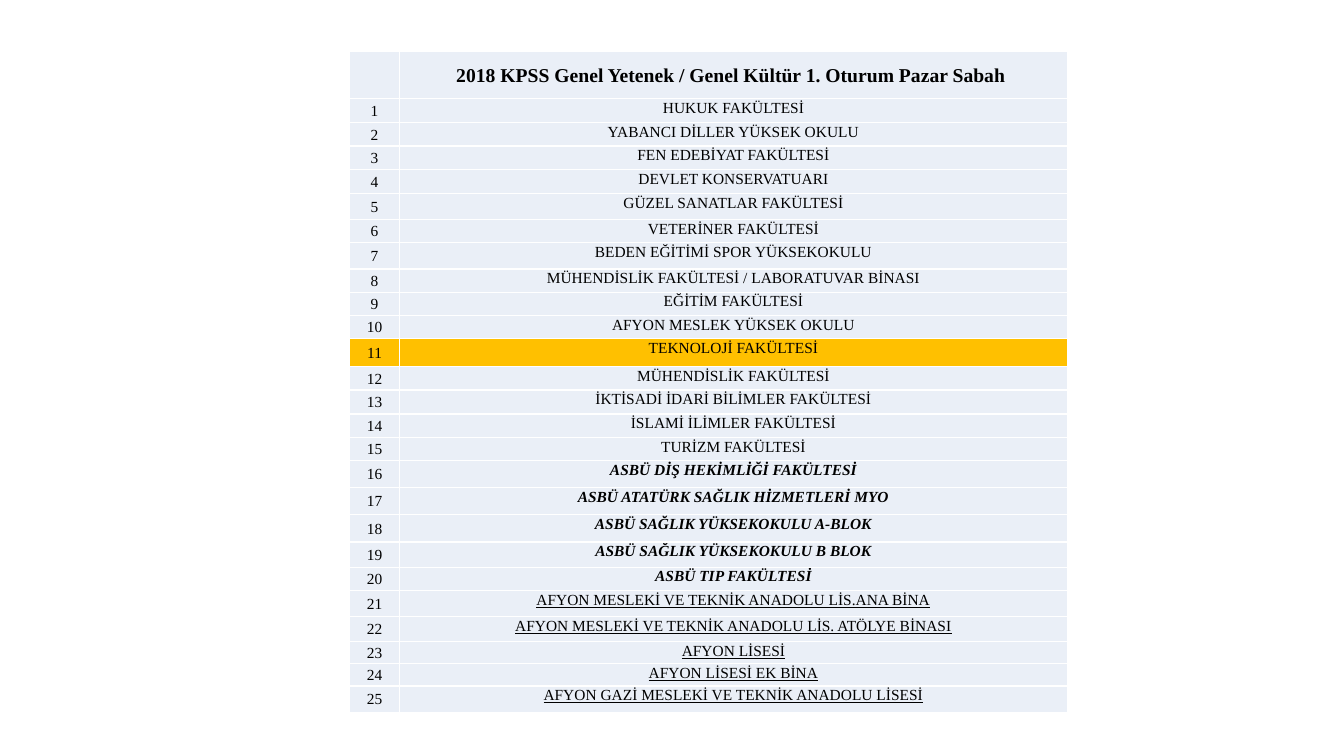
from dataclasses import dataclass

from lxml.etree import SubElement
from pptx import Presentation
from pptx.dml.color import RGBColor
from pptx.enum.text import MSO_ANCHOR, PP_ALIGN
from pptx.oxml.ns import qn
from pptx.util import Inches, Pt


@dataclass(frozen=True)
class Theme:
    font: str = "Times New Roman"
    ink: str = "000000"
    row: str = "EAEFF7"
    highlight: str = "FFC000"
    border: str = "FFFFFF"
    border_width: int = Pt(1)
    heading_size: int = Pt(14)
    body_size: int = Pt(11)


THEME = Theme()
PLAIN = {}
HEADING = {"bold": True}
HEALTH = {"bold": True, "italic": True}
SCHOOL = {"underline": True}

EXAM_SESSION = "2018 KPSS Genel Yetenek / Genel Kültür 1. Oturum Pazar Sabah"
HEADING_HEIGHT = 0.47
NUMBER_WIDTH = 0.49
HIGHLIGHTED_NUMBER = 11
BUILDINGS = [
    ("HUKUK FAKÜLTESİ", 0.24, PLAIN),
    ("YABANCI DİLLER YÜKSEK OKULU", 0.23, PLAIN),
    ("FEN EDEBİYAT FAKÜLTESİ", 0.23, PLAIN),
    ("DEVLET KONSERVATUARI", 0.24, PLAIN),
    ("GÜZEL SANATLAR FAKÜLTESİ", 0.26, PLAIN),
    ("VETERİNER FAKÜLTESİ", 0.23, PLAIN),
    ("BEDEN EĞİTİMİ SPOR YÜKSEKOKULU", 0.26, PLAIN),
    ("MÜHENDİSLİK FAKÜLTESİ / LABORATUVAR BİNASI", 0.23, PLAIN),
    ("EĞİTİM FAKÜLTESİ", 0.23, PLAIN),
    ("AFYON MESLEK YÜKSEK OKULU", 0.23, PLAIN),
    ("TEKNOLOJİ FAKÜLTESİ", 0.28, PLAIN),
    ("MÜHENDİSLİK FAKÜLTESİ", 0.23, PLAIN),
    ("İKTİSADİ İDARİ BİLİMLER FAKÜLTESİ", 0.24, PLAIN),
    ("İSLAMİ İLİMLER FAKÜLTESİ", 0.23, PLAIN),
    ("TURİZM FAKÜLTESİ", 0.23, PLAIN),
    ("ASBÜ DİŞ HEKİMLİĞİ FAKÜLTESİ", 0.27, HEALTH),
    ("ASBÜ ATATÜRK SAĞLIK HİZMETLERİ MYO", 0.27, HEALTH),
    ("ASBÜ SAĞLIK YÜKSEKOKULU A-BLOK", 0.27, HEALTH),
    ("ASBÜ SAĞLIK YÜKSEKOKULU B BLOK", 0.25, HEALTH),
    ("ASBÜ TIP FAKÜLTESİ", 0.23, HEALTH),
    ("AFYON MESLEKİ VE TEKNİK ANADOLU LİS.ANA BİNA", 0.26, SCHOOL),
    ("AFYON MESLEKİ VE TEKNİK ANADOLU LİS. ATÖLYE BİNASI", 0.25, SCHOOL),
    ("AFYON LİSESİ", 0.22, SCHOOL),
    ("AFYON LİSESİ EK BİNA", 0.22, SCHOOL),
    ("AFYON GAZİ MESLEKİ VE TEKNİK ANADOLU LİSESİ", 0.26, SCHOOL),
]


def set_attributes(target, values):
    for attribute, value in values.items():
        setattr(target, attribute, value)


def format_cell(cell, fill, anchor):
    properties = cell._tc.get_or_add_tcPr()
    for side in ("lnL", "lnR", "lnT", "lnB"):
        border = SubElement(properties, qn(f"a:{side}"), w=str(THEME.border_width))
        SubElement(SubElement(border, qn("a:solidFill")), qn("a:srgbClr"), val=THEME.border)
    cell.fill.solid()
    cell.fill.fore_color.rgb = RGBColor.from_string(fill)
    set_attributes(cell, {
        "vertical_anchor": anchor,
        "margin_left": Inches(0.01),
        "margin_right": Inches(0.01),
        "margin_top": Inches(0.01),
        "margin_bottom": 0,
    })


def write_text(cell, text, size, style):
    paragraph = cell.text_frame.paragraphs[0]
    paragraph.alignment = PP_ALIGN.CENTER
    run = paragraph.add_run()
    run.text = text
    set_attributes(run.font, {
        "name": THEME.font, "size": size, "bold": False, "italic": False, **style,
    })
    run.font.color.rgb = RGBColor.from_string(THEME.ink)


def add_building_list(slide, left, top, width):
    heights = [HEADING_HEIGHT] + [height for _, height, _ in BUILDINGS]
    buildings = slide.shapes.add_table(
        len(heights), 2, Inches(left), Inches(top), Inches(width), Inches(sum(heights))
    ).table
    set_attributes(buildings, {"first_row": False, "horz_banding": False})
    for column, column_width in zip(buildings.columns, (NUMBER_WIDTH, width - NUMBER_WIDTH)):
        column.width = Inches(column_width)
    for row, height in zip(buildings.rows, heights):
        row.height = Inches(height)

    for cell in buildings.rows[0].cells:
        format_cell(cell, THEME.row, MSO_ANCHOR.MIDDLE)
    heading = buildings.cell(0, 1)
    write_text(heading, EXAM_SESSION, THEME.heading_size, HEADING)
    write_text(heading, "\t", THEME.body_size, HEADING)

    for number, (building, _, style) in enumerate(BUILDINGS, 1):
        fill = THEME.highlight if number == HIGHLIGHTED_NUMBER else THEME.row
        number_cell, building_cell = buildings.rows[number].cells
        format_cell(number_cell, fill, MSO_ANCHOR.MIDDLE)
        format_cell(building_cell, fill, MSO_ANCHOR.TOP)
        write_text(number_cell, str(number), THEME.body_size, PLAIN)
        write_text(building_cell, building, THEME.body_size, style)


def main():
    presentation = Presentation()
    set_attributes(presentation, {"slide_width": Inches(13.33), "slide_height": Inches(7.5)})
    slide = presentation.slides.add_slide(presentation.slide_layouts[6])
    add_building_list(slide, left=3.47, top=0.51, width=7.12)
    presentation.save("out.pptx")


if __name__ == "__main__":
    main()
